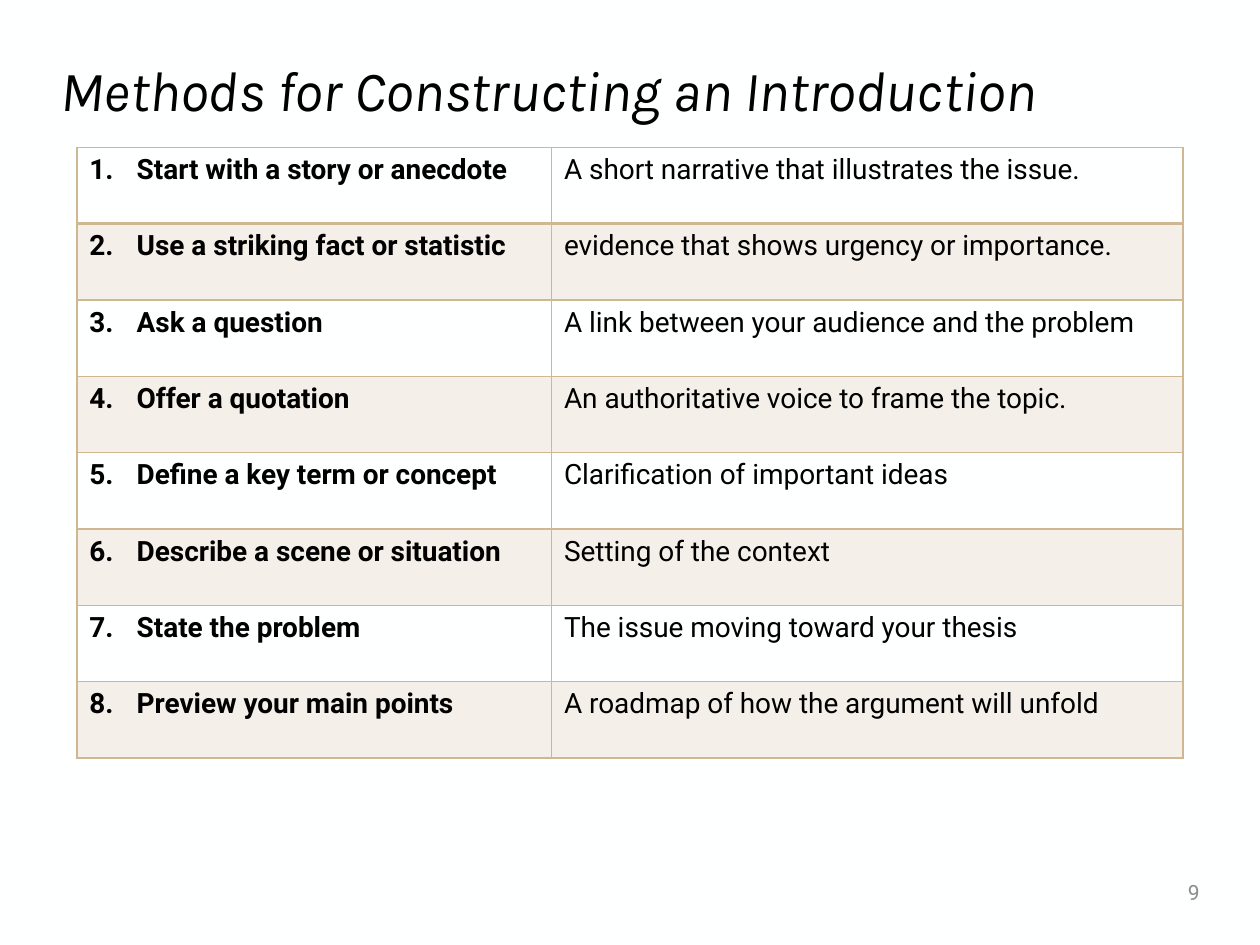
from dataclasses import dataclass

from pptx import Presentation
from pptx.dml.color import RGBColor
from pptx.enum.text import MSO_ANCHOR, PP_ALIGN
from pptx.oxml.ns import qn
from pptx.oxml.xmlchemy import OxmlElement
from pptx.slide import Slide
from pptx.table import _Cell
from pptx.text.text import _Paragraph
from pptx.util import Pt

MIDDLE = MSO_ANCHOR.MIDDLE
LEFT, RIGHT = PP_ALIGN.LEFT, PP_ALIGN.RIGHT


@dataclass(frozen=True)
class Theme:
    back: str = "FEFFFF"
    ink: str = "000000"
    gray: str = "8C8C8C"
    gold: str = "CFB891"
    tint: int = 20
    head: str = "Karla"
    body: str = "Roboto"
    title: float = 32.4
    text: float = 16
    note: float = 12


@dataclass(frozen=True)
class Method:
    name: str
    gist: str


THEME = Theme()
INDENT = 27
WIDTHS = (271.2, 361)
ROW = 43.65
METHODS = [
    Method("Start with a story or anecdote", "A short narrative that illustrates the issue."),
    Method("Use a striking fact or statistic", "evidence that shows urgency or importance."),
    Method("Ask a question", "A link between your audience and the problem"),
    Method("Offer a quotation", "An authoritative voice to frame the topic."),
    Method("Define a key term or concept", "Clarification of important ideas"),
    Method("Describe a scene or situation", "Setting of the context"),
    Method("State the problem", "The issue moving toward your thesis"),
    Method("Preview your main points", "A roadmap of how the argument will unfold"),
]


def add_run(para: _Paragraph, text: str, size: float, face: str = THEME.body,
            color: str = THEME.ink, bold: bool = False, italic: bool = False) -> None:
    run = para.add_run()
    run.text = text
    font = run.font
    font.name, font.size = face, Pt(size)
    font.bold, font.italic = bold, italic
    font.color.rgb = RGBColor.from_string(color)


def number(para: _Paragraph, start: int) -> None:
    """Give the paragraph a hanging automatic number."""
    props = para._p.get_or_add_pPr()
    props.set("marL", str(Pt(INDENT)))
    props.set("indent", str(-Pt(INDENT)))
    mark = OxmlElement("a:buAutoNum")
    mark.set("type", "arabicPeriod")
    mark.set("startAt", str(start))
    props.append(mark)


def border(cell: _Cell, first: bool) -> None:
    """Draw all four edges, with a thicker rule under the first row."""
    props = cell._tc.get_or_add_tcPr()
    for side in "LRTB":
        line = OxmlElement(f"a:ln{side}")
        line.set("w", str(Pt(2 if first and side == "B" else 1)))
        fill = OxmlElement("a:solidFill")
        color = OxmlElement("a:srgbClr")
        color.set("val", THEME.gold)
        fill.append(color)
        line.append(fill)
        props.append(line)


def shade(cell: _Cell, band: bool) -> None:
    if not band:
        cell.fill.background()
        return
    cell.fill.solid()
    cell.fill.fore_color.rgb = RGBColor.from_string(THEME.gold)
    color = cell._tc.tcPr.find(qn("a:solidFill"))[0]
    alpha = OxmlElement("a:alpha")
    alpha.set("val", str(THEME.tint * 1000))
    color.append(alpha)


def add_title(slide: Slide, text: str) -> None:
    title = slide.shapes.title
    title.left, title.top = Pt(27.4), Pt(30.2)
    title.width, title.height = Pt(665.3), Pt(46.1)
    frame = title.text_frame
    frame.vertical_anchor = MIDDLE
    frame.word_wrap = True
    para = frame.paragraphs[0]
    para.alignment = LEFT
    para.line_spacing = 0.9
    add_run(para, text, THEME.title, THEME.head, italic=True)


def add_grid(slide: Slide, items: list[Method]) -> None:
    table = slide.shapes.add_table(len(items), len(WIDTHS), Pt(43.9), Pt(84.2),
                                   Pt(sum(WIDTHS)), Pt(ROW * len(items))).table
    table.first_row = table.horz_banding = False
    for col, width in zip(table.columns, WIDTHS):
        col.width = Pt(width)
    for i, item in enumerate(items):
        table.rows[i].height = Pt(ROW)
        for j, text in enumerate((item.name, item.gist)):
            cell = table.cell(i, j)
            border(cell, i == 0)
            shade(cell, i % 2 == 1)
            para = cell.text_frame.paragraphs[0]
            if j == 0:
                number(para, i + 1)
            add_run(para, text, THEME.text, bold=j == 0)


def add_page(slide: Slide, text: str) -> None:
    box = slide.shapes.add_textbox(Pt(606.2), Pt(495.4), Pt(86.4), Pt(28.8))
    frame = box.text_frame
    frame.word_wrap = True
    frame.vertical_anchor = MIDDLE
    para = frame.paragraphs[0]
    para.alignment = RIGHT
    add_run(para, text, THEME.note, color=THEME.gray)


def main() -> None:
    deck = Presentation()
    deck.slide_width, deck.slide_height = Pt(720), Pt(540)
    slide = deck.slides.add_slide(deck.slide_layouts.get_by_name("Title Only"))

    # Background
    fill = slide.background.fill
    fill.solid()
    fill.fore_color.rgb = RGBColor.from_string(THEME.back)

    # Title, table of methods, page number
    add_title(slide, "Methods for Constructing an Introduction")
    add_grid(slide, METHODS)
    add_page(slide, "9")
    deck.save("out.pptx")


if __name__ == "__main__":
    main()
